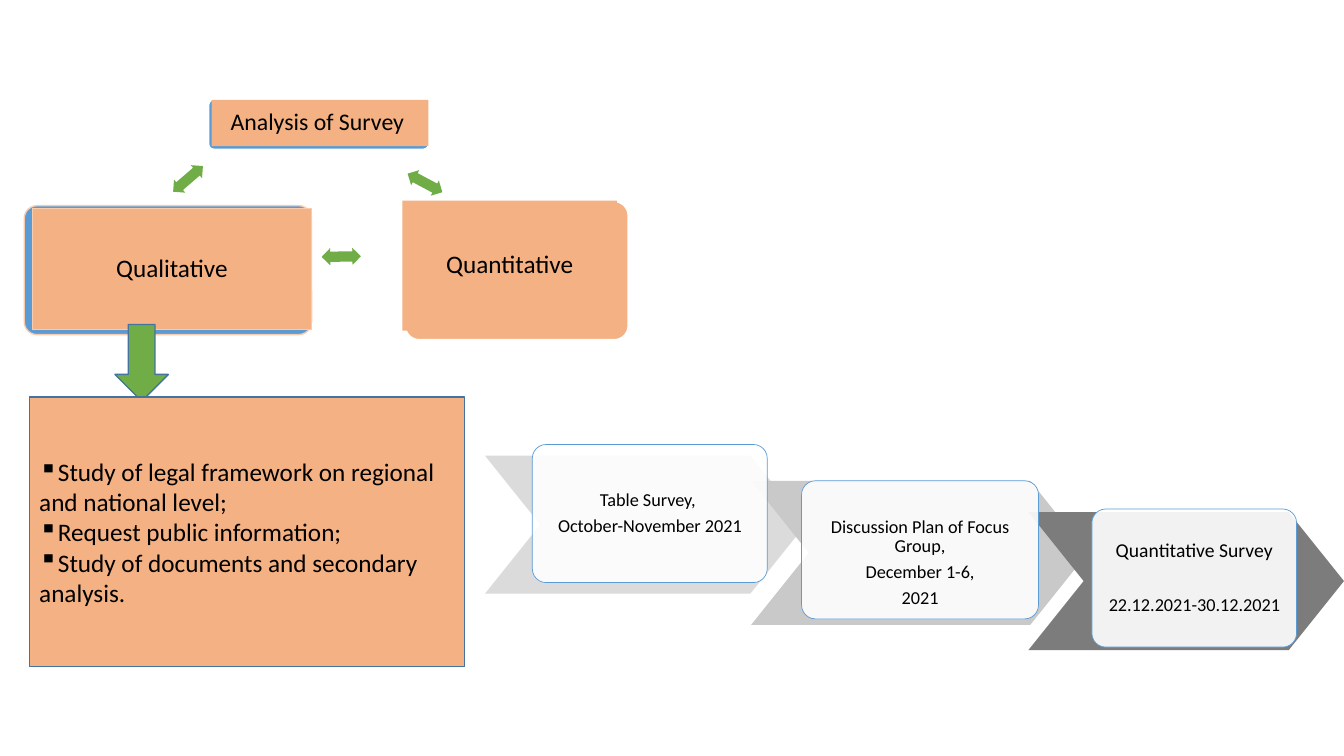
from dataclasses import dataclass
from typing import Optional

import pptx
import pptx.dml.color
import pptx.enum.shapes
import pptx.enum.text
import pptx.oxml
import pptx.oxml.ns
import pptx.util

PX = 9144  # 100 px to the inch
MSO = pptx.enum.shapes.MSO_SHAPE
ALIGN = pptx.enum.text.PP_ALIGN
Box = tuple[int, int, int, int]


@dataclass(frozen=True)
class Theme:
    font: str = "Calibri"
    text: str = "000000"
    white: str = "FFFFFF"
    peach: str = "F4B183"
    pale_peach: str = "F8CBAD"
    blue: str = "5B9BD5"
    dark_blue: str = "43739E"
    green: str = "70AD47"
    heading_size: int = 17
    body_size: int = 18
    card_size: int = 13
    survey_size: int = 14


THEME = Theme()


@dataclass(frozen=True)
class Line:
    text: str
    size: int
    before: float = 0


@dataclass(frozen=True)
class Node:
    label: Line
    back: Box
    back_fill: str
    back_line: str
    front: Box
    front_line: Optional[str] = None


@dataclass(frozen=True)
class Arrow:
    box: Box
    rotation: float


@dataclass(frozen=True)
class Stage:
    chevron: Box
    color: str
    card: Box
    lines: tuple[Line, ...]
    text_shift: int = 0


NODES = (
    Node(Line("Analysis of Survey ", THEME.heading_size), (207, 99, 218, 49),
         THEME.blue, THEME.white, (210, 99, 215, 46)),
    Node(Line("Qualitative", THEME.body_size), (24, 204, 285, 128),
         THEME.blue, THEME.pale_peach, (32, 207, 277, 120), THEME.pale_peach),
    Node(Line("Quantitative", THEME.body_size), (402, 200, 221, 137),
         THEME.peach, THEME.white, (399, 199, 213, 129)),
)
ARROWS = (
    Arrow((167, 169, 39, 17), 319.2),
    Arrow((402, 173, 39, 17), 28.1),
    Arrow((319, 246, 39, 17), 179),
)
STAGES = (
    Stage((481, 452, 318, 137), "DBDBDB", (528, 441, 233, 137),
          (Line("Table Survey, ", THEME.card_size),
           Line("October-November 2021", THEME.card_size))),
    Stage((745, 477, 334, 143), "C9C9C9", (795, 477, 235, 137),
          (Line("Discussion Plan of Focus Group,", THEME.card_size),
           Line("December 1-6,", THEME.card_size),
           Line("2021", THEME.card_size)), text_shift=13),
    Stage((1020, 508, 313, 137), "7C7C7C", (1083, 505, 203, 137),
          (Line("Quantitative Survey", THEME.survey_size),
           Line("22.12.2021-30.12.2021", THEME.card_size, before=19))),
)
STUDY_TASKS = (
    "Study of legal framework on regional and national level;",
    "Request public information;",
    "Study of documents and secondary analysis.",
)


def rgb(color: str) -> pptx.dml.color.RGBColor:
    return pptx.dml.color.RGBColor.from_string(color)


def emu(box: Box) -> list[int]:
    return [v * PX for v in box]


def add_shape(s, kind, box: Box, fill: str, line: Optional[str] = None,
              width: float = 1, adj: tuple[float, ...] = ()):
    sp = s.shapes.add_shape(kind, *emu(box))
    sp.shadow.inherit = False
    sp.fill.solid()
    sp.fill.fore_color.rgb = rgb(fill)
    if line:
        sp.line.color.rgb = rgb(line)
        sp.line.width = pptx.util.Pt(width)
    else:
        sp.line.fill.background()
    for i, value in enumerate(adj):
        sp.adjustments[i] = value
    return sp


def set_frame(tf, inset: int) -> None:
    """Wrap the text, anchor it in the middle and set equal side insets."""
    values = {"word_wrap": True,
              "vertical_anchor": pptx.enum.text.MSO_ANCHOR.MIDDLE}
    values |= {f"margin_{side}": inset * PX
               for side in ("left", "top", "right", "bottom")}
    for name, value in values.items():
        setattr(tf, name, value)


def add_run(p, text: str, size: int) -> None:
    r = p.add_run()
    r.text = text
    for name, value in {"name": THEME.font, "size": pptx.util.Pt(size)}.items():
        setattr(r.font, name, value)
    r.font.color.rgb = rgb(THEME.text)


def write_centred(tf, lines: tuple[Line, ...], inset: int) -> None:
    set_frame(tf, inset)
    for i, line in enumerate(lines):
        p = tf.add_paragraph() if i else tf.paragraphs[0]
        values = {"alignment": ALIGN.CENTER, "line_spacing": 0.9,
                  "space_after": pptx.util.Pt(round(0.35 * line.size, 1))}
        if line.before:
            values["space_before"] = pptx.util.Pt(line.before)
        for name, value in values.items():
            setattr(p, name, value)
        add_run(p, line.text, line.size)


def set_alpha(sp, percent: int) -> None:
    color = sp.fill._xPr.find(".//" + pptx.oxml.ns.qn("a:srgbClr"))
    alpha = pptx.oxml.parse_xml(
        f'<a:alpha {pptx.oxml.ns.nsdecls("a")} val="{percent * 1000}"/>')
    color.append(alpha)


def add_node(s, node: Node) -> None:
    add_shape(s, MSO.ROUNDED_RECTANGLE, node.back, node.back_fill,
              node.back_line, adj=(0.1,))
    sp = add_shape(s, MSO.RECTANGLE, node.front, THEME.peach,
                   node.front_line, 0.75)
    write_centred(sp.text_frame, (node.label,), 7)


def add_card(s, stage: Stage) -> None:
    sp = add_shape(s, MSO.ROUNDED_RECTANGLE, stage.card, THEME.white,
                   THEME.blue, 0.5, (0.1,))
    set_alpha(sp, 90)
    x, y, w, h = stage.card
    box = (x + 4, y + 4 + stage.text_shift, w - 8, h - 8)
    tf = s.shapes.add_textbox(*emu(box)).text_frame
    write_centred(tf, stage.lines, 10)


def add_study_box(s) -> None:
    sp = add_shape(s, MSO.RECTANGLE, (29, 394, 432, 267), THEME.peach,
                   THEME.dark_blue)
    tf = sp.text_frame
    set_frame(tf, 10)
    for i, task in enumerate(STUDY_TASKS):
        p = tf.add_paragraph() if i else tf.paragraphs[0]
        p._p.get_or_add_pPr().append(pptx.oxml.parse_xml(
            f'<a:buChar {pptx.oxml.ns.nsdecls("a")} char="▪"/>'))
        p.alignment = ALIGN.LEFT
        add_run(p, task, THEME.body_size)


def main() -> None:
    prs = pptx.Presentation()
    prs.slide_width, prs.slide_height = 1333 * PX, 750 * PX
    s = prs.slides.add_slide(prs.slide_layouts[6])
    for node in NODES:
        add_node(s, node)
    for arrow in ARROWS:
        sp = add_shape(s, MSO.LEFT_RIGHT_ARROW, arrow.box, THEME.green,
                       adj=(0.6, 0.5))
        sp.rotation = arrow.rotation
    for stage in STAGES:
        add_shape(s, MSO.CHEVRON, stage.chevron, stage.color, adj=(0.4,))
    for stage in STAGES:
        add_card(s, stage)
    add_shape(s, MSO.DOWN_ARROW, (114, 322, 53, 76), THEME.green,
              THEME.dark_blue)
    add_study_box(s)
    prs.save("out.pptx")


if __name__ == "__main__":
    main()
